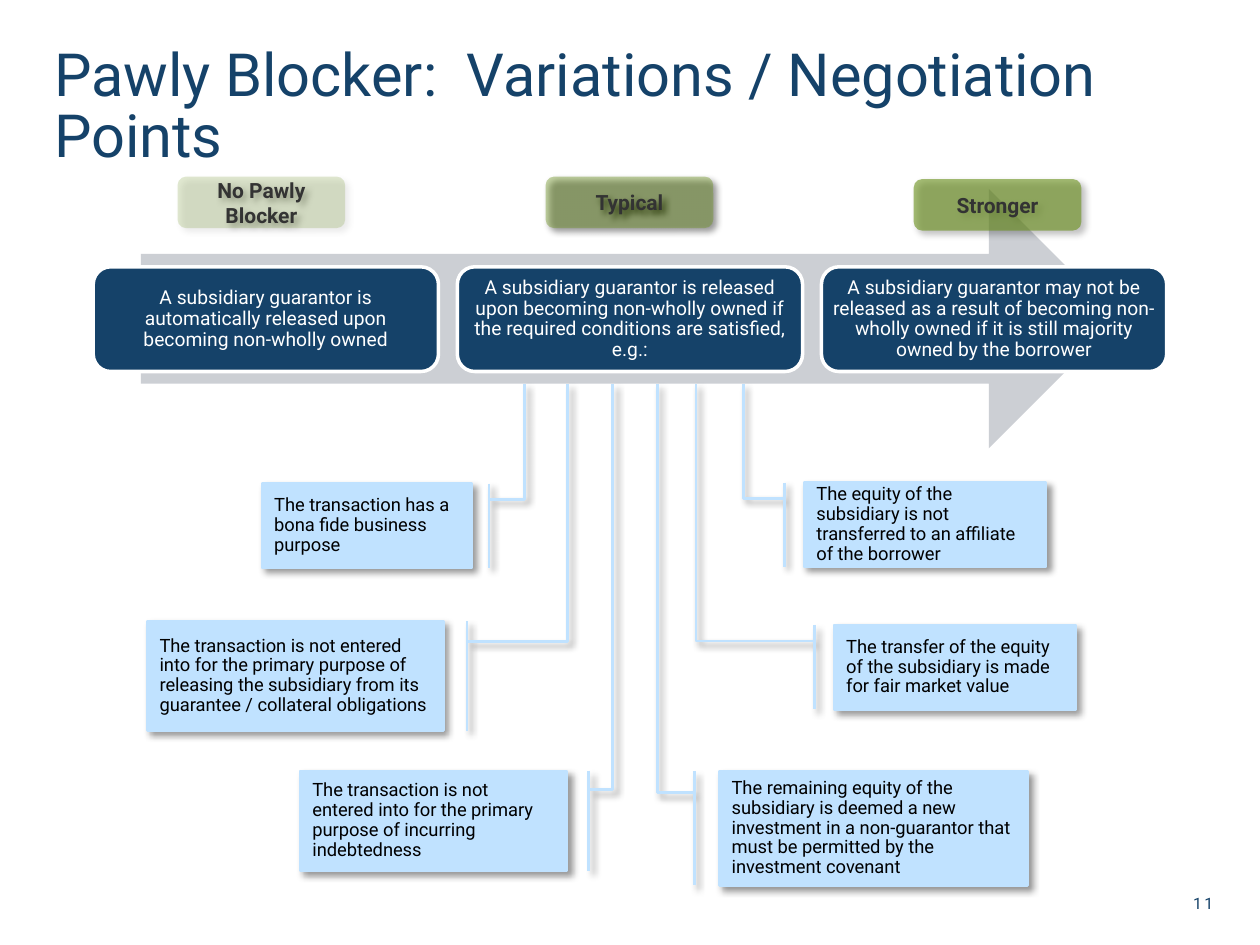
from lxml import etree
from pptx import Presentation
from pptx.dml.color import RGBColor
from pptx.enum import shapes, text
from pptx.oxml import ns
from pptx.util import Cm, Pt

NAVY = RGBColor(0x15, 0x42, 0x69)
WHITE = RGBColor(0xFF, 0xFF, 0xFF)
BLACK = RGBColor(0, 0, 0)
CHARCOAL = RGBColor(0x33, 0x33, 0x33)
SILVER = RGBColor(0xCC, 0xCF, 0xD4)
SKY = RGBColor(0xC0, 0xE2, 0xFF)
OLIVE = RGBColor(0x6A, 0x91, 0x1A)

FONT = "Roboto"
ARROW_BOTTOM = 7.75

# label, opacity in percent, top, position
STAGES = [
    ("No Pawly Blocker", 20, 3.56,
     "A subsidiary guarantor is automatically released upon becoming non-wholly owned"),
    ("Typical", 40, 3.56,
     "A subsidiary guarantor is released upon becoming non-wholly owned if the "
     "required conditions are satisfied, e.g.:"),
    ("Stronger", 60, 3.61,
     "A subsidiary guarantor may not be released as a result of becoming "
     "non-wholly owned if it is still majority owned by the borrower"),
]

# box, elbow distance as a share of the width, on the left side, wording
CONDITIONS = [
    ((5.28, 9.75, 4.24, 1.7), 0.25, True,
     "The transaction has a bona fide business purpose"),
    ((2.97, 12.52, 5.97, 2.21), 0.42, True,
     "The transaction is not entered into for the primary purpose of releasing "
     "the subsidiary from its guarantee / collateral obligations"),
    ((6.05, 15.54, 5.38, 2.01), 0.17, True,
     "The transaction is not entered into for the primary purpose of incurring indebtedness"),
    ((16.21, 9.73, 4.88, 1.7), 0.25, False,
     "The equity of the subsidiary is not transferred to an affiliate of the borrower"),
    ((16.81, 12.6, 4.88, 1.7), 0.57, False,
     "The transfer of the equity of the subsidiary is made for fair market value"),
    ((14.5, 15.54, 6.22, 2.31), 0.2, False,
     "The remaining equity of the subsidiary is deemed a new investment in a "
     "non-guarantor that must be permitted by the investment covenant"),
]


def write(frame, wording, size, color, align, spacing=None, bold=False):
    """Fill a text frame with one formatted paragraph."""
    frame.word_wrap = True
    frame.text = wording
    paragraph = frame.paragraphs[0]
    paragraph.alignment = align
    paragraph.line_spacing = spacing
    font = paragraph.font
    font.name, font.size, font.bold = FONT, Pt(size), bold
    font.color.rgb = color


def set_margins(frame, margin):
    """Give a text frame the same margin on all sides."""
    frame.margin_left = frame.margin_right = margin
    frame.margin_top = frame.margin_bottom = margin


def add_block(slide, preset, box, fill, line=None, width=0):
    """Add a flat filled shape with an optional outline."""
    block = slide.shapes.add_shape(preset, *map(Cm, box))
    block.shadow.inherit = False
    block.fill.solid()
    block.fill.fore_color.rgb = fill
    if line is None:
        block.line.fill.background()
    else:
        block.line.color.rgb = line
        block.line.width = Pt(width)
    block.text_frame.vertical_anchor = text.MSO_ANCHOR.MIDDLE
    return block


def set_alpha(color_element, percent):
    """Set the opacity of a colour element."""
    alpha = etree.SubElement(color_element, ns.qn("a:alpha"))
    alpha.set("val", str(percent * 1000))


def add_shadow(block):
    """Cast a soft shadow to the lower right."""
    effects = block._element.spPr.find(ns.qn("a:effectLst"))
    shadow = etree.SubElement(effects, ns.qn("a:outerShdw"), blurRad=str(Pt(4)),
                              dist=str(Pt(3)), dir="2700000", rotWithShape="0")
    set_alpha(etree.SubElement(shadow, ns.qn("a:srgbClr"), val="000000"), 40)


def add_title(slide, wording):
    """Place and format the title."""
    title = slide.shapes.title
    title.left, title.top, title.width, title.height = map(Cm, (1.09, 0.97, 23.19, 1.55))
    frame = title.text_frame
    set_margins(frame, 0)
    frame.auto_size = text.MSO_AUTO_SIZE.NONE
    frame.vertical_anchor = text.MSO_ANCHOR.TOP
    write(frame, wording, 34, NAVY, text.PP_ALIGN.LEFT, 0.85)


def add_page_number(slide, number):
    """Add the letter-spaced page number."""
    frame = slide.shapes.add_textbox(*map(Cm, (23.5, 18.01, 0.96, 0.38))).text_frame
    set_margins(frame, 0)
    write(frame, number, 9, NAVY, text.PP_ALIGN.RIGHT)
    frame.paragraphs[0].runs[0].font._element.set("spc", "150")


def add_position(slide, column, wording):
    """Add a navy card on the arrow."""
    card = add_block(slide, shapes.MSO_SHAPE.ROUNDED_RECTANGLE,
                     (1.88 + 7.34 * column, 5.38, 6.96, 2.11), NAVY, WHITE, 2)
    set_margins(card.text_frame, Cm(0.13))
    write(card.text_frame, wording, 11, WHITE, text.PP_ALIGN.CENTER, 0.9)


def add_stage_label(slide, column, label, opacity, top):
    """Add a translucent green label above a card."""
    pill = add_block(slide, shapes.MSO_SHAPE.ROUNDED_RECTANGLE,
                     (3.58 + 7.42 * column, top, 3.38, 1.04), OLIVE)
    set_alpha(next(pill._element.spPr.iter(ns.qn("a:srgbClr"))), opacity)
    add_shadow(pill)
    write(pill.text_frame, label, 12, CHARCOAL, text.PP_ALIGN.CENTER, bold=True)


def add_condition(slide, box, elbow, on_left, wording):
    """Add a callout whose leader rises to the arrow."""
    callout = add_block(slide, shapes.MSO_SHAPE.LINE_CALLOUT_2_BORDER_AND_ACCENT_BAR,
                        box, SKY, SKY, 1.5)
    _, top, _, height = box
    leader = (0.19, -0.08, 0.19, -elbow, (ARROW_BOTTOM - top) / height, -elbow)
    for index, value in enumerate(leader):
        callout.adjustments[index] = value
    if on_left:
        callout._element.spPr.find(ns.qn("a:xfrm")).set("flipH", "1")
    add_shadow(callout)
    write(callout.text_frame, wording, 10.5, BLACK, text.PP_ALIGN.LEFT, 0.9)


def main():
    """Build the slide and save it."""
    deck = Presentation()
    deck.slide_width, deck.slide_height = Cm(25.4), Cm(19.05)
    slide = deck.slides.add_slide(deck.slide_layouts.get_by_name("Title Only"))
    add_title(slide, "Pawly Blocker:  Variations / Negotiation Points")
    add_page_number(slide, "11")
    add_block(slide, shapes.MSO_SHAPE.RIGHT_ARROW, (2.84, 3.81, 19.71, 5.23), SILVER)
    for column, (label, opacity, top, position) in enumerate(STAGES):
        add_position(slide, column, position)
        add_stage_label(slide, column, label, opacity, top)
    for condition in CONDITIONS:
        add_condition(slide, *condition)
    deck.save("out.pptx")


if __name__ == "__main__":
    main()
